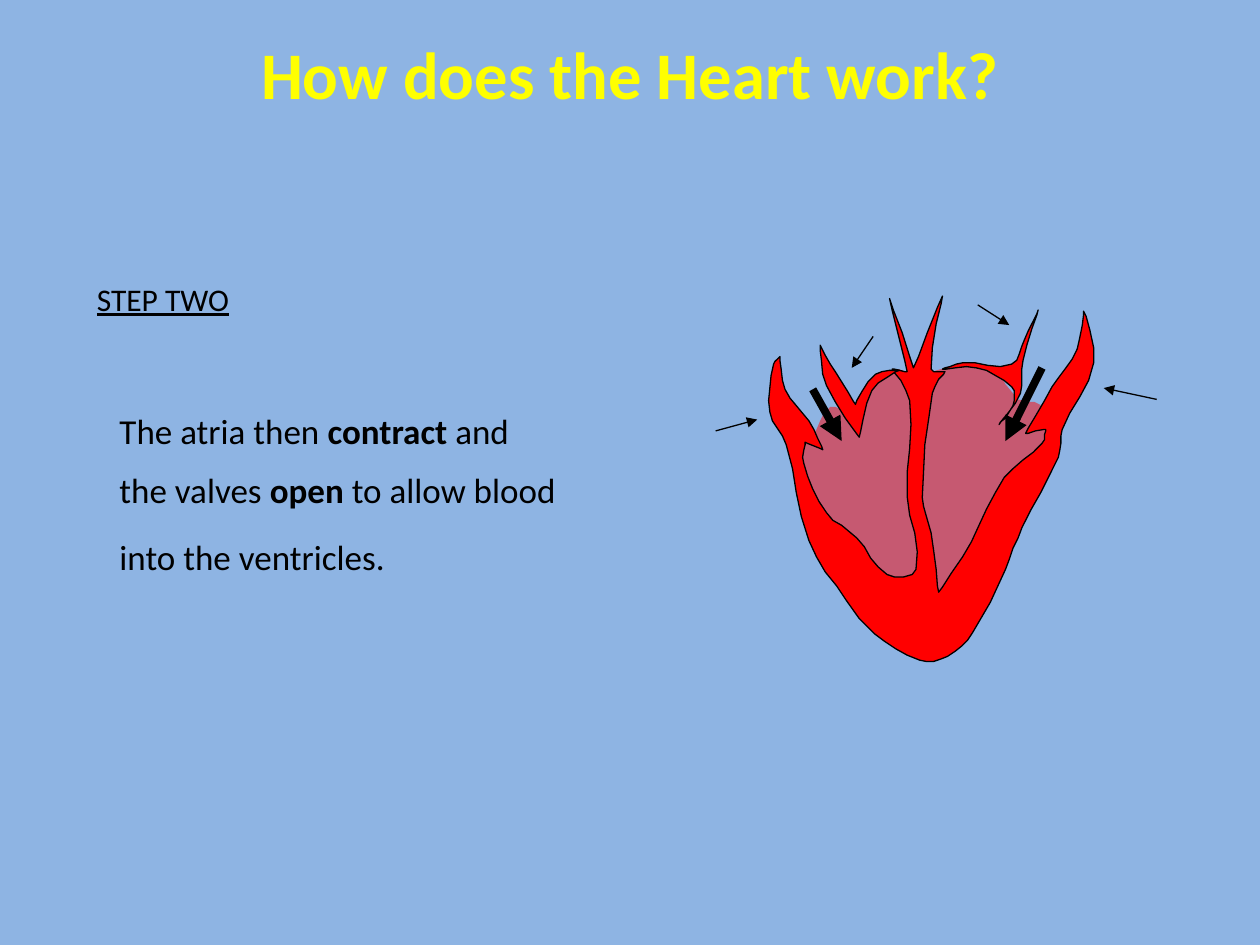
import math
from dataclasses import dataclass

from lxml import etree
from pptx import Presentation, util as u
from pptx.dml.color import RGBColor
from pptx.enum import shapes, text
from pptx.oxml.ns import qn

RED, BLACK, YELLOW, SKY = "FF0000", "000000", "FFFF00", "8EB4E3"

LEFT_VENTRICLE = [
    (733, 303), (727, 350), (733, 414), (740, 476), (769, 471), (807, 388),
    (839, 349), (825, 321), (808, 317), (788, 294), (747, 293)]
RIGHT_VENTRICLE = [
    (644, 347), (632, 351), (648, 400), (691, 463), (717, 479), (735, 464),
    (727, 350), (727, 303), (708, 294), (676, 327), (659, 323)]
HEART_WALL = [
    (614, 289), (611, 327), (624, 353), (642, 429), (672, 477), (694, 503),
    (730, 524), (752, 521), (772, 502), (798, 452), (811, 419), (840, 363),
    (843, 341), (868, 288), (860, 247), (855, 277), (835, 307), (814, 344),
    (830, 341), (827, 352), (797, 379), (771, 430), (745, 470), (739, 423),
    (732, 395), (740, 312), (750, 295), (739, 293), (748, 235), (725, 292),
    (706, 237), (720, 295), (708, 293), (722, 318), (720, 394), (727, 452),
    (704, 456), (680, 427), (656, 407), (638, 368), (639, 351), (653, 357),
    (642, 334), (623, 309), (619, 283)]
RIGHT_ATRIUM = [
    (651, 274), (656, 306), (682, 347), (692, 310), (714, 294), (695, 297),
    (679, 321), (663, 295)]
LEFT_ATRIUM = [
    (824, 246), (812, 286), (810, 312), (793, 337), (804, 322), (803, 307),
    (775, 292), (748, 293), (764, 288), (803, 289), (813, 270)]

ARROWS = [
    ((6.45, 3.09), (6.68, 3.5), 4.5), ((8.27, 2.92), (7.98, 3.5), 4.5),
    ((5.68, 3.42), (6.01, 3.33), 0.75), ((6.93, 2.67), (6.76, 2.92), 0.75),
    ((7.76, 2.42), (8.01, 2.58), 0.75), ((9.18, 3.17), (8.76, 3.08), 0.75)]


def rgb(value):
    return RGBColor.from_string(value)


def tangent(before, here, after):
    """Return the unit direction at a point, or zero at a sharp tip."""
    ax, ay = here[0] - before[0], here[1] - before[1]
    bx, by = after[0] - here[0], after[1] - here[1]
    if ax * bx + ay * by <= 0:
        return 0, 0
    size = math.hypot(ax + bx, ay + by)
    return (ax + bx) / size, (ay + by) / size


def smooth(points, steps=4):
    """Return a closed curve through the points that keeps sharp tips."""
    n = len(points)
    slopes = [tangent(points[i - 1], points[i], points[(i + 1) % n]) for i in range(n)]
    curve = []
    for i, a in enumerate(points):
        b, ta, tb = points[(i + 1) % n], slopes[i], slopes[(i + 1) % n]
        reach = math.dist(a, b)
        for t in (k / steps for k in range(steps)):
            q = 1 - t
            curve.append(tuple(
                q * q * (1 + 2 * t) * a[d] + t * t * (1 + 2 * q) * b[d]
                + reach * t * q * (q * ta[d] - t * tb[d]) for d in (0, 1)))
    return curve


@dataclass
class Canvas:
    """Draws text, outlines and arrows on one slide in a common style."""
    s: object
    font: str = "Calibri"

    def background(self, color):
        fill = self.s.background.fill
        fill.solid()
        fill.fore_color.rgb = rgb(color)

    def outline(self, points, color, alpha=None):
        curve = smooth(points)
        builder = self.s.shapes.build_freeform(*curve[0], scale=u.Inches(0.01))
        builder.add_line_segments(curve[1:], close=True)
        sp = builder.convert_to_shape()
        sp.shadow.inherit = False
        sp.fill.solid()
        sp.fill.fore_color.rgb = rgb(color)
        if alpha:
            clr = sp._element.spPr.find(qn("a:solidFill"))[0]
            etree.SubElement(clr, qn("a:alpha"), val=str(alpha * 1000))
            sp.line.fill.background()
        else:
            sp.line.color.rgb = rgb(BLACK)
            sp.line.width = u.Pt(0.75)

    def arrow(self, start, end, width):
        ends = [u.Inches(v) for v in start + end]
        sp = self.s.shapes.add_connector(shapes.MSO_CONNECTOR.STRAIGHT, *ends)
        sp.line.color.rgb = rgb(BLACK)
        sp.line.width = u.Pt(width)
        ln = sp._element.spPr.find(qn("a:ln"))
        etree.SubElement(ln, qn("a:tailEnd"), type="triangle")
        etree.SubElement(sp._element.spPr, qn("a:effectLst"))

    def text(self, box, lines, color=BLACK, spacing=(1,), indent=0, align="LEFT", **font):
        sp = self.s.shapes.add_textbox(*[u.Inches(v) for v in box])
        tf = sp.text_frame
        tf.word_wrap = True
        for i, (line, space) in enumerate(zip(lines, spacing)):
            p = tf.add_paragraph() if i else tf.paragraphs[0]
            p.alignment = getattr(text.PP_ALIGN, align)
            p.line_spacing = float(space)
            p._p.get_or_add_pPr().set("marL", str(u.Inches(indent)))
            for j, part in enumerate(line.split("*")):
                r = p.add_run()
                r.text = part
                r.font.color.rgb = rgb(color)
                style = {"name": self.font, "bold": j % 2 == 1, **font}
                for key, value in style.items():
                    setattr(r.font, key, value)


def main():
    prs = Presentation()
    prs.slide_width, prs.slide_height = u.Inches(10), u.Inches(7.5)
    c = Canvas(prs.slides.add_slide(prs.slide_layouts[6]))
    c.background(SKY)
    for ventricle in (LEFT_VENTRICLE, RIGHT_VENTRICLE):
        c.outline(ventricle, RED, alpha=50)
    for wall in (HEART_WALL, RIGHT_ATRIUM, LEFT_ATRIUM):
        c.outline(wall, RED)
    for arrow in ARROWS:
        c.arrow(*arrow)
    c.text((0.35, 3.17, 4.83, 1.42),
           ["The atria then *contract* and", "the valves *open* to allow blood",
            "into the ventricles."],
           spacing=(1.1, 1.4, 1.6), indent=0.5, size=u.Pt(20))
    c.text((0, 0.21, 10, 1.38), ["How does the Heart work?"], YELLOW,
           align="CENTER", size=u.Pt(38), bold=True)
    c.text((0.67, 2.17, 3.07, 0.4), ["STEP TWO"], size=u.Pt(18), underline=True)
    prs.save("out.pptx")


if __name__ == "__main__":
    main()
